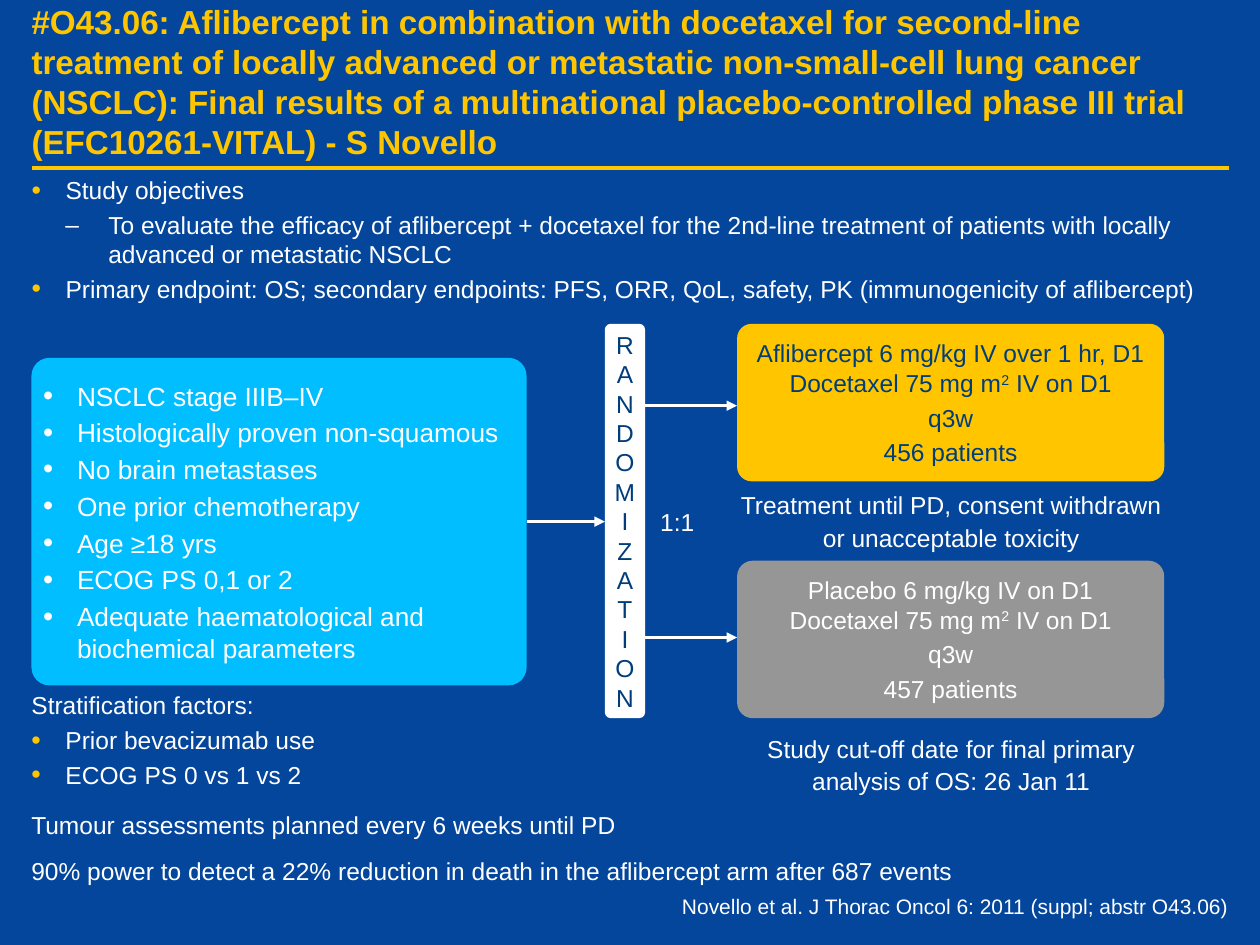
from dataclasses import dataclass

from lxml.etree import SubElement
from pptx import Presentation
from pptx.dml.color import RGBColor
from pptx.enum.shapes import MSO_CONNECTOR, MSO_SHAPE
from pptx.enum.text import MSO_ANCHOR, MSO_AUTO_SIZE, PP_ALIGN
from pptx.oxml.ns import qn
from pptx.util import Inches, Pt


@dataclass(frozen=True)
class Theme:
    font: str = "Arial"
    back: str = "03469C"
    gold: str = "FFC600"
    white: str = "FFFFFF"
    navy: str = "003D7B"
    cyan: str = "00BEFF"
    grey: str = "969696"
    title: float = 19
    criteria: float = 15
    body: float = 14
    source: float = 12


T = Theme()
LEFT, CENTER, RIGHT = PP_ALIGN.LEFT, PP_ALIGN.CENTER, PP_ALIGN.RIGHT
EDGE = 0.25
BAR_X, BAR_W = 4.8, 0.32
ARM_X, ARM_W, ARM_H = 5.85, 3.39, 1.25


def rgb(value):
    return RGBColor.from_string(value)


def set_frame(tf, insets, anchor=MSO_ANCHOR.TOP):
    """Insets are left, top, right, bottom in inches."""
    tf.word_wrap = True
    tf.auto_size = MSO_AUTO_SIZE.NONE
    tf.vertical_anchor = anchor
    tf.margin_left, tf.margin_top, tf.margin_right, tf.margin_bottom = map(Inches, insets)


def add_run(p, text, size, color, bold=False, superscript=False):
    r = p.add_run()
    r.text = text
    r.font.name = T.font
    r.font.size = Pt(size)
    r.font.bold = bold
    r.font.color.rgb = rgb(color)
    if superscript:
        r.font._element.set("baseline", "30000")


def add_text(tf, text, size=T.body, color=T.white, align=LEFT, before=3, spacing=1.0, bold=False):
    """Add one paragraph; a newline breaks the line and ² is set as a raised 2."""
    first = tf.paragraphs[0]
    p = tf.add_paragraph() if first.runs else first
    p.alignment = align
    p.space_before = Pt(before)
    p.line_spacing = spacing
    for i, line in enumerate(text.split("\n")):
        if i:
            p.add_line_break()
        head, raised, rest = line.partition("²")
        add_run(p, head, size, color, bold)
        if raised:
            add_run(p, "2", size, color, bold, superscript=True)
            add_run(p, rest, size, color, bold)
    return p


def add_bullet(tf, text, size=T.body, mark=T.gold, level=0):
    p = add_text(tf, text, size)
    p.level = level
    left, hang, char, scale = ((0.27, 0.27, "•", 110), (0.61, 0.34, "–", 100))[level]
    pPr = p._p.get_or_add_pPr()
    pPr.set("marL", str(Inches(left)))
    pPr.set("indent", str(-Inches(hang)))
    color = SubElement(pPr, qn("a:buClr"))
    SubElement(color, qn("a:srgbClr"), val=mark)
    SubElement(pPr, qn("a:buSzPct"), val=str(scale * 1000))
    SubElement(pPr, qn("a:buFont"), typeface=T.font)
    SubElement(pPr, qn("a:buChar"), char=char)


def place(sp, x, y, w, h):
    sp.left, sp.top, sp.width, sp.height = map(Inches, (x, y, w, h))


def add_box(s, x, y, w, h, insets=(0.1, 0.05, 0.1, 0.05)):
    tf = s.shapes.add_textbox(*map(Inches, (x, y, w, h))).text_frame
    set_frame(tf, insets)
    return tf


def add_note(s, x, y, w, h, text, align=LEFT):
    add_text(add_box(s, x, y, w, h), text, align=align, before=1, spacing=1.1)


def add_panel(s, x, y, w, h, fill, radius):
    sp = s.shapes.add_shape(MSO_SHAPE.ROUNDED_RECTANGLE, *map(Inches, (x, y, w, h)))
    sp.adjustments[0] = radius
    sp.shadow.inherit = False
    sp.fill.solid()
    sp.fill.fore_color.rgb = rgb(fill)
    sp.line.fill.background()
    set_frame(sp.text_frame, [0.05] * 4, MSO_ANCHOR.MIDDLE)
    return sp.text_frame


def add_line(s, x1, x2, y, color=T.white, width=1.5, arrow=True):
    cn = s.shapes.add_connector(MSO_CONNECTOR.STRAIGHT, *map(Inches, (x1, y, x2, y)))
    cn.line.color.rgb = rgb(color)
    cn.line.width = Pt(width)
    if arrow:
        SubElement(cn.line._get_or_add_ln(), qn("a:tailEnd"), type="triangle")
    SubElement(cn._element.spPr, qn("a:effectLst"))


def add_heading(s):
    title, body = s.placeholders[0], s.placeholders[1]
    place(title, EDGE, 0.25, 9.5, 1.03)
    set_frame(title.text_frame, (0, 0.05, 0, 0), MSO_ANCHOR.BOTTOM)
    add_text(
        title.text_frame,
        "#O43.06: Aflibercept in combination with docetaxel for second-line treatment of "
        "locally advanced or metastatic non-small-cell lung cancer (NSCLC): Final results of a "
        "multinational placebo-controlled phase III trial (EFC10261-VITAL) - S Novello",
        T.title, T.gold, before=0, bold=True)
    add_line(s, EDGE, 9.75, 1.33, T.gold, 2.25, arrow=False)

    place(body, EDGE, 1.34, 9.5, 1.31)
    tf = body.text_frame
    set_frame(tf, (0, 0.05, 0, 0.05))
    add_bullet(tf, "Study objectives")
    add_bullet(tf, "To evaluate the efficacy of aflibercept + docetaxel for the 2nd-line treatment "
                   "of patients with locally advanced or metastatic NSCLC", mark=T.white, level=1)
    add_bullet(tf, "Primary endpoint: OS; secondary endpoints: PFS, ORR, QoL, safety, PK "
                   "(immunogenicity of aflibercept)")


def add_criteria(s):
    tf = add_panel(s, EDGE, 2.84, 3.93, 2.6, T.cyan, 0.055)
    for text in ("NSCLC stage IIIB–IV", "Histologically proven non-squamous",
                 "No brain metastases", "One prior chemotherapy", "Age ≥18 yrs",
                 "ECOG PS 0,1 or 2", "Adequate haematological and biochemical parameters"):
        add_bullet(tf, text, T.criteria, T.white)

    tf = add_box(s, EDGE, 5.43, 2.5, 0.92, (0, 0.05, 0, 0.05))
    add_text(tf, "Stratification factors:")
    for text in ("Prior bevacizumab use", "ECOG PS 0 vs 1 vs 2"):
        add_bullet(tf, text)


def add_arm(s, y, fill, color, radius, drug, patients):
    tf = add_panel(s, ARM_X, y, ARM_W, ARM_H, fill, radius)
    for text in (f"{drug}\nDocetaxel 75 mg m² IV on D1", "q3w", f"{patients} patients"):
        add_text(tf, text, color=color, align=CENTER)


def add_randomization(s):
    add_line(s, EDGE + 3.93, BAR_X, 4.14)
    for y in (3.22, 5.06):
        add_line(s, BAR_X + BAR_W, ARM_X, y)
    tf = add_panel(s, BAR_X, 2.57, BAR_W, 3.13, T.white, 0.144)
    add_text(tf, "\n".join("RANDOMIZATION"), color=T.navy, align=CENTER)
    add_note(s, 5.04, 3.95, 0.67, 0.36, "1:1", CENTER)


def main():
    prs = Presentation()
    prs.slide_width, prs.slide_height = Inches(10), Inches(7.5)
    s = prs.slides.add_slide(prs.slide_layouts[1])
    s.background.fill.solid()
    s.background.fill.fore_color.rgb = rgb(T.back)

    add_heading(s)
    add_criteria(s)
    add_randomization(s)
    add_arm(s, 2.57, T.gold, T.navy, 0.092, "Aflibercept 6 mg/kg IV over 1 hr, D1", 456)
    add_arm(s, 4.45, T.grey, T.white, 0.099, "Placebo 6 mg/kg IV on D1", 457)
    for y, text in ((3.82, "Treatment until PD, consent withdrawn or unacceptable toxicity"),
                    (5.75, "Study cut-off date for final primary\nanalysis of OS: 26 Jan 11")):
        add_note(s, 5.76, y, 3.58, 0.62, text, CENTER)
    add_note(s, 0.15, 6.36, 6.27, 0.36, "Tumour assessments planned every 6 weeks until PD")
    add_note(s, 0.15, 6.72, 9.61, 0.34, "90% power to detect a 22% reduction in death in the "
                                        "aflibercept arm after 687 events")
    add_text(add_box(s, 4.85, 7.04, 5, 0.3),
             "Novello et al. J Thorac Oncol 6: 2011 (suppl; abstr O43.06)",
             T.source, align=RIGHT, before=0)
    prs.save("out.pptx")


if __name__ == "__main__":
    main()
